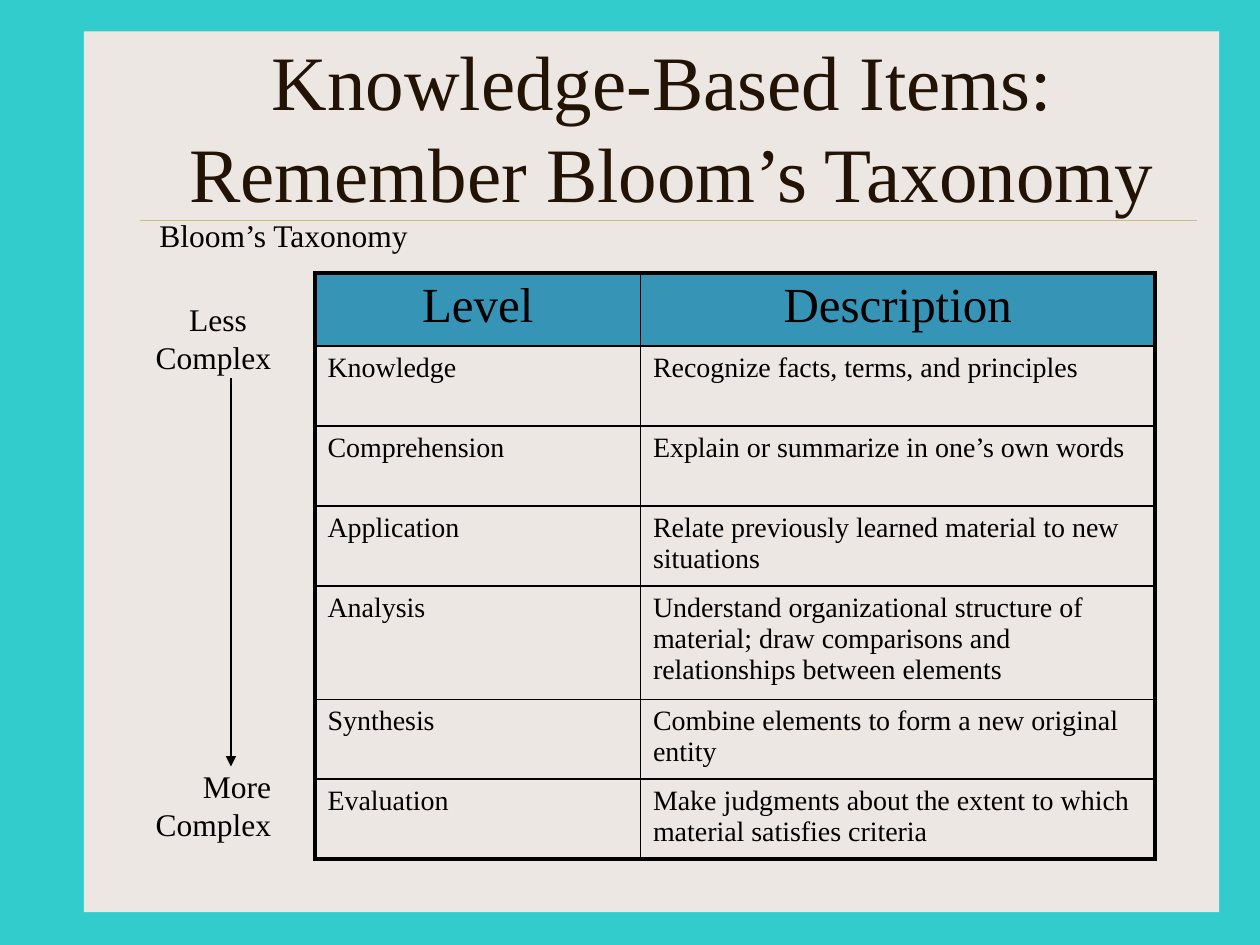
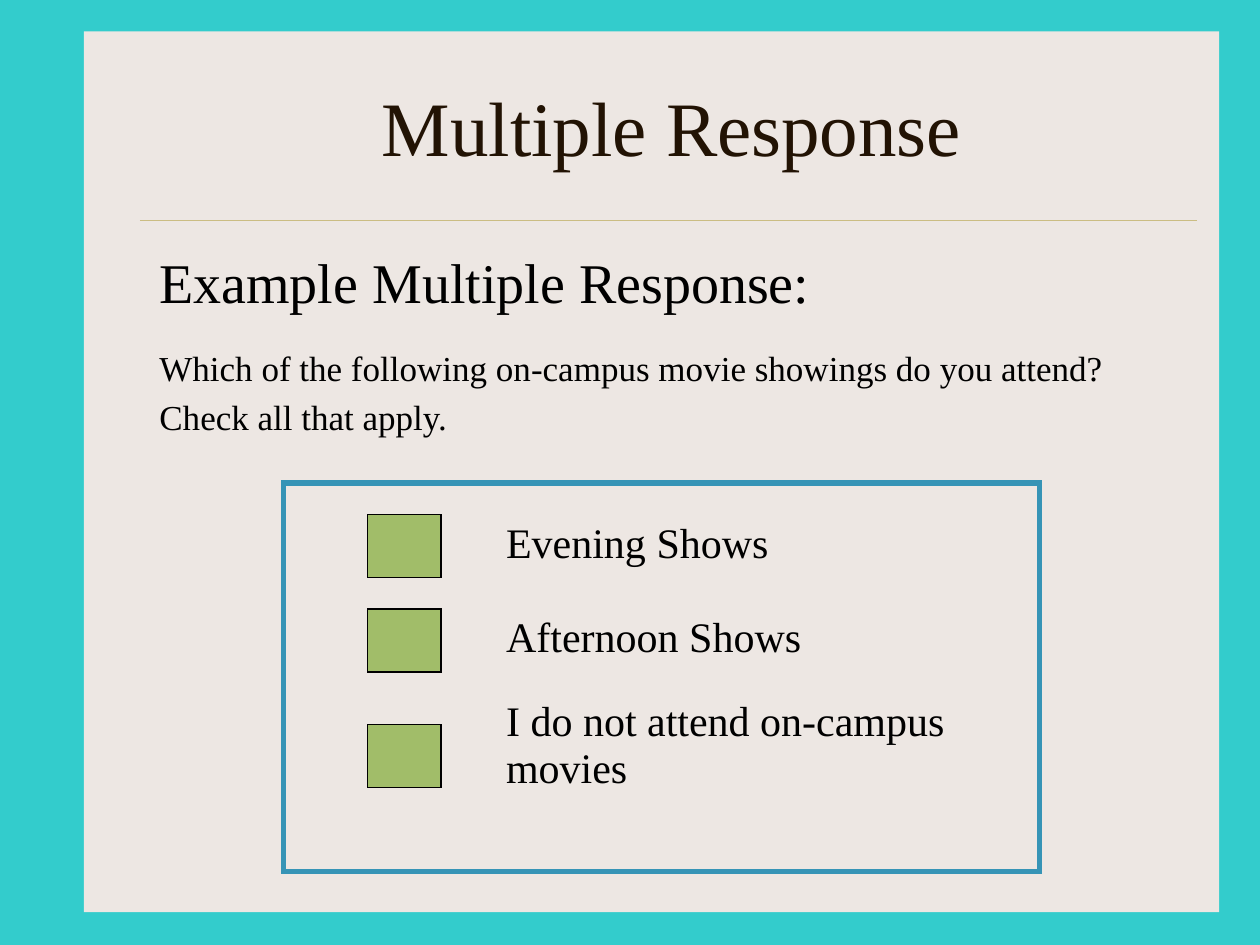
from lxml import etree
from pptx import Presentation
from pptx.dml.color import RGBColor
from pptx.enum.shapes import MSO_CONNECTOR, MSO_SHAPE
from pptx.enum.text import MSO_ANCHOR, PP_ALIGN
from pptx.oxml.ns import qn
from pptx.util import Pt

LEFT, CENTER, RIGHT = PP_ALIGN.LEFT, PP_ALIGN.CENTER, PP_ALIGN.RIGHT
MIDDLE = MSO_ANCHOR.MIDDLE
RECT = MSO_SHAPE.RECTANGLE
STRAIGHT = MSO_CONNECTOR.STRAIGHT
FONT = "Times New Roman"
PLAIN = "{2D5ABB26-0587-4C30-8999-92F81FD0307C}"
COLORS = {
    "back": "33CCCC", "panel": "EDE7E3", "rule": "CBBD83", "title": "221304",
    "ink": "000000", "blue": "3694B6", "green": "A1BD69",
}
LEVELS = [
    ("Level", "Description"),
    ("Knowledge", "Recognize facts, terms, and principles"),
    ("Comprehension", "Explain or summarize in one’s own words"),
    ("Application", "Relate previously learned material to new situations"),
    ("Analysis", "Understand organizational structure of material; "
                 "draw comparisons and relationships between elements"),
    ("Synthesis", "Combine elements to form a new original entity"),
    ("Evaluation", "Make judgments about the extent to which material satisfies criteria"),
]
SHOWS = ["Evening Shows", "Afternoon Shows", "I do not attend on-campus movies"]


def color(name):
    """Return the named colour."""
    return RGBColor.from_string(COLORS[name])


def points(*values):
    """Turn numbers into lengths in points."""
    return [Pt(value) for value in values]


def add_run(para, text, size, ink="ink"):
    """Add one run of text in the deck's font."""
    run = para.add_run()
    run.text = text
    run.font.name = FONT
    run.font.size = Pt(size)
    run.font.color.rgb = color(ink)


def add_text(slide, box, lines):
    """Add a text box of (text, size, space before, align, indent) lines."""
    frame = slide.shapes.add_textbox(*points(*box)).text_frame
    frame.word_wrap = True
    for i, (text, size, before, align, indent) in enumerate(lines):
        para = frame.add_paragraph() if i else frame.paragraphs[0]
        para.alignment = align
        para.space_before = Pt(before)
        if indent:
            para._p.get_or_add_pPr().set("marL", str(Pt(indent)))
        add_run(para, text, size)


def add_rect(slide, box, fill=None, line=None, width=0.75):
    """Add a rectangle with an optional fill and sharp outline."""
    rect = slide.shapes.add_shape(RECT, *points(*box))
    rect.shadow.inherit = False
    for name, part in ((fill, rect.fill), (line, rect.line.fill)):
        if name:
            part.solid()
            part.fore_color.rgb = color(name)
        else:
            part.background()
    if line:
        rect.line.width = Pt(width)
        etree.SubElement(rect.line._get_or_add_ln(), qn("a:miter"), lim="800000")
    return rect


def add_line(slide, ends, ink, width, arrow=False):
    """Add a straight line, with an arrowhead at its end if asked."""
    line = slide.shapes.add_connector(STRAIGHT, *points(*ends))
    line.line.color.rgb = color(ink)
    line.line.width = Pt(width)
    if arrow:
        etree.SubElement(line.line._get_or_add_ln(), qn("a:tailEnd"), type="triangle")
    etree.SubElement(line.element.spPr, qn("a:effectLst"))
    return line


def add_table(slide, box, cols, rows):
    """Add a table without style, with the given column widths and row heights."""
    frame = slide.shapes.add_table(len(rows), len(cols), *points(*box))
    next(frame.element.iter(qn("a:tableStyleId"))).text = PLAIN
    table = frame.table
    table.first_row = table.horz_banding = False
    for col, width in zip(table.columns, cols):
        col.width = Pt(width)
    for row, height in zip(table.rows, rows):
        row.height = Pt(height)
    return table


def add_edge(cell, side, width):
    """Draw one border of a cell."""
    edge = etree.SubElement(cell._tc.get_or_add_tcPr(), qn("a:ln" + side), w=str(Pt(width)))
    fill = etree.SubElement(edge, qn("a:solidFill"))
    etree.SubElement(fill, qn("a:srgbClr"), val=COLORS["ink"])


def add_base(deck, *title):
    """Add a slide with panel, rule and title lines."""
    slide = deck.slides.add_slide(deck.slide_layouts[5])
    head = slide.shapes.title
    panel = add_rect(slide, (48, 18, 648.75, 503.25), "panel")
    rule = add_line(slide, (80, 126, 684, 126), "rule", 0.25)
    for part in (panel, rule):
        head.element.addprevious(part.element)
    head.left, head.top, head.width, head.height = points(84, 27, 600, 90)
    head.text_frame.vertical_anchor = MIDDLE
    head.text_frame.word_wrap = True
    para = head.text_frame.paragraphs[0]
    para.alignment = CENTER
    for i, text in enumerate(title):
        if i:
            para.add_line_break()
        add_run(para, text, 44, "title")
    return slide


def add_levels(slide, box):
    """Fill the box with the table of levels."""
    rows = [41.7, 45.7, 45.7, 45.7, 64.6, 45.7, 45.7]
    table = add_table(slide, box, (186, box[2] - 186), rows)
    last = len(LEVELS) - 1
    for i, texts in enumerate(LEVELS):
        for j, text in enumerate(texts):
            cell = table.cell(i, j)
            outer = {"L": j == 0, "R": j == 1, "T": i == 0, "B": i == last}
            for side, thick in outer.items():
                add_edge(cell, side, 2.25 if thick else 1)
            para = cell.text_frame.paragraphs[0]
            if i:
                cell.fill.background()
            else:
                cell.fill.solid()
                cell.fill.fore_color.rgb = color("blue")
                para.alignment = CENTER
            add_run(para, text, 16 if i else 28)


def add_scale(slide, box):
    """Place the complexity labels and the arrow between them."""
    left, top, width, height = box
    add_text(slide, (left, top, width, 48),
             [("Less", 18, 0, LEFT, 35), ("Complex", 18, 0, RIGHT, 0)])
    add_text(slide, (left, top + height - 48, width, 48),
             [("More Complex", 18, 0, RIGHT, 0)])
    mid = left + 66
    add_line(slide, (mid, top + 48, mid, top + height - 45), "ink", 0.75, True)


def add_choices(slide, box):
    """Place the answer table, its check boxes and the frame."""
    left, top, width, height = box
    table = add_table(slide, (left, top + 18, 450, 169), (120, 330), (54, 48, 67))
    for i, show in enumerate(SHOWS):
        add_run(table.cell(i, 1).text_frame.paragraphs[0], show, 24)
    for drop in (18, 72, 138):
        add_rect(slide, (left + 48, top + drop, 42, 36), "green", "ink")
    add_rect(slide, box, None, "blue", 3)


def add_bloom(deck):
    """Build the slide on Bloom's levels."""
    slide = add_base(deck, "Knowledge-Based Items: ", "Remember Bloom’s Taxonomy")
    add_text(slide, (84, 120, 600, 30), [("Bloom’s Taxonomy", 18, 0, LEFT, 0)])
    add_levels(slide, (180, 156, 480, 334.8))
    add_scale(slide, (66, 168, 96, 315))


def add_response(deck):
    """Build the slide on multiple response."""
    slide = add_base(deck, "Multiple Response")
    add_text(slide, (84, 138, 600, 120), [
        ("Example Multiple Response:", 32, 0, LEFT, 0),
        ("Which of the following on-campus movie showings do you attend?", 20, 18, LEFT, 0),
        ("Check all that apply.", 20, 4, LEFT, 0),
    ])
    add_choices(slide, (162, 276, 432, 222))


def main():
    """Build and save the deck."""
    deck = Presentation()
    deck.slide_width, deck.slide_height = points(720, 540)
    fill = deck.slide_master.background.fill
    fill.solid()
    fill.fore_color.rgb = color("back")
    add_bloom(deck)
    add_response(deck)
    deck.save("out.pptx")


if __name__ == "__main__":
    main()
